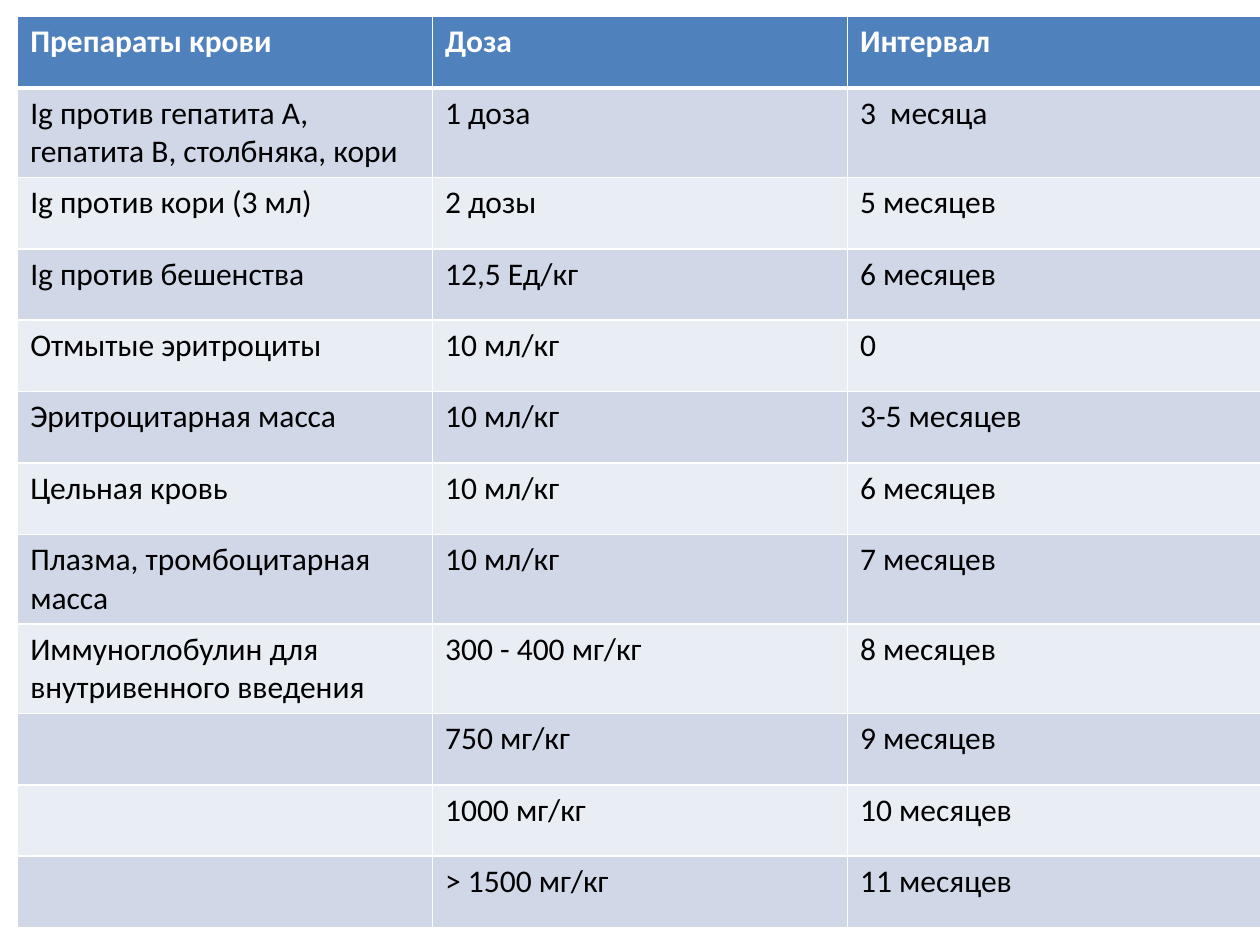
"""Build a slide with a table of blood products, doses and vaccination intervals."""
import lxml.etree
import pptx
import pptx.dml.color
import pptx.oxml.ns
import pptx.util

Pt = pptx.util.Pt

HEADINGS = ("Препараты крови", "Доза", "Интервал")
PRODUCTS = (
    ("Ig против гепатита А, гепатита В, столбняка, кори", "1 доза", "3  месяца"),
    ("Ig против кори (3 мл)", "2 дозы", "5 месяцев"),
    ("Ig против бешенства", "12,5 Ед/кг", "6 месяцев"),
    ("Отмытые эритроциты", "10 мл/кг", "0"),
    ("Эритроцитарная масса", "10 мл/кг", "3-5 месяцев"),
    ("Цельная кровь", "10 мл/кг", "6 месяцев"),
    ("Плазма, тромбоцитарная масса", "10 мл/кг", "7 месяцев"),
    ("Иммуноглобулин для внутривенного введения", "300 - 400 мг/кг", "8 месяцев"),
    ("", "750 мг/кг", "9 месяцев"),
    ("", "1000 мг/кг", "10 месяцев"),
    ("", "> 1500 мг/кг", "11 месяцев"),
)


def color(code):
    return pptx.dml.color.RGBColor.from_string(code)


def write(frame, text, font="Calibri", size=18, ink="000000", bold=False):
    paragraph = frame.paragraphs[0]
    if not text:
        paragraph.font.size = Pt(size)
        return
    run = paragraph.add_run()
    run.text = text
    run.font.name = font
    run.font.size = Pt(size)
    run.font.bold = bold
    run.font.color.rgb = color(ink)


class IntervalSlide:
    header_fill = "4F81BD"
    band_fills = ("D0D8E8", "E9EDF4")
    border = "FFFFFF"
    thin, thick = 1, 3

    def __init__(self, deck):
        self.slide = deck.slides.add_slide(deck.slide_layouts[6])

    def edges(self, cell, **widths):
        properties = cell._tc.get_or_add_tcPr()
        qn = pptx.oxml.ns.qn
        for side in ("L", "R", "T", "B"):
            width = Pt(widths.get(side, self.thin))
            line = lxml.etree.SubElement(properties, qn(f"a:ln{side}"), w=str(width))
            fill = lxml.etree.SubElement(line, qn("a:solidFill"))
            lxml.etree.SubElement(fill, qn("a:srgbClr"), val=self.border)

    def cell(self, cell, text, fill, widths, **style):
        self.edges(cell, **widths)
        cell.fill.solid()
        cell.fill.fore_color.rgb = color(fill)
        write(cell.text_frame, text, **style)

    def table(self, headings, products, left, top, column_width, row_height):
        rows, columns = len(products) + 1, len(headings)
        table = self.slide.shapes.add_table(
            rows, columns, Pt(left), Pt(top),
            Pt(column_width * columns), Pt(row_height * rows)).table
        for column, heading in enumerate(headings):
            self.cell(table.cell(0, column), heading, self.header_fill,
                      {"B": self.thick}, ink="FFFFFF", bold=True)
        for row, product in enumerate(products, start=1):
            fill = self.band_fills[(row - 1) % 2]
            widths = {"T": self.thick} if row == 1 else {}
            for column, value in enumerate(product):
                self.cell(table.cell(row, column), value, fill, widths)


def main():
    deck = pptx.Presentation()
    deck.slide_width, deck.slide_height = Pt(720), Pt(540)
    IntervalSlide(deck).table(HEADINGS, PRODUCTS, left=10.1, top=9.4,
                              column_width=237.1, row_height=40.8)
    deck.save("out.pptx")


if __name__ == "__main__":
    main()
